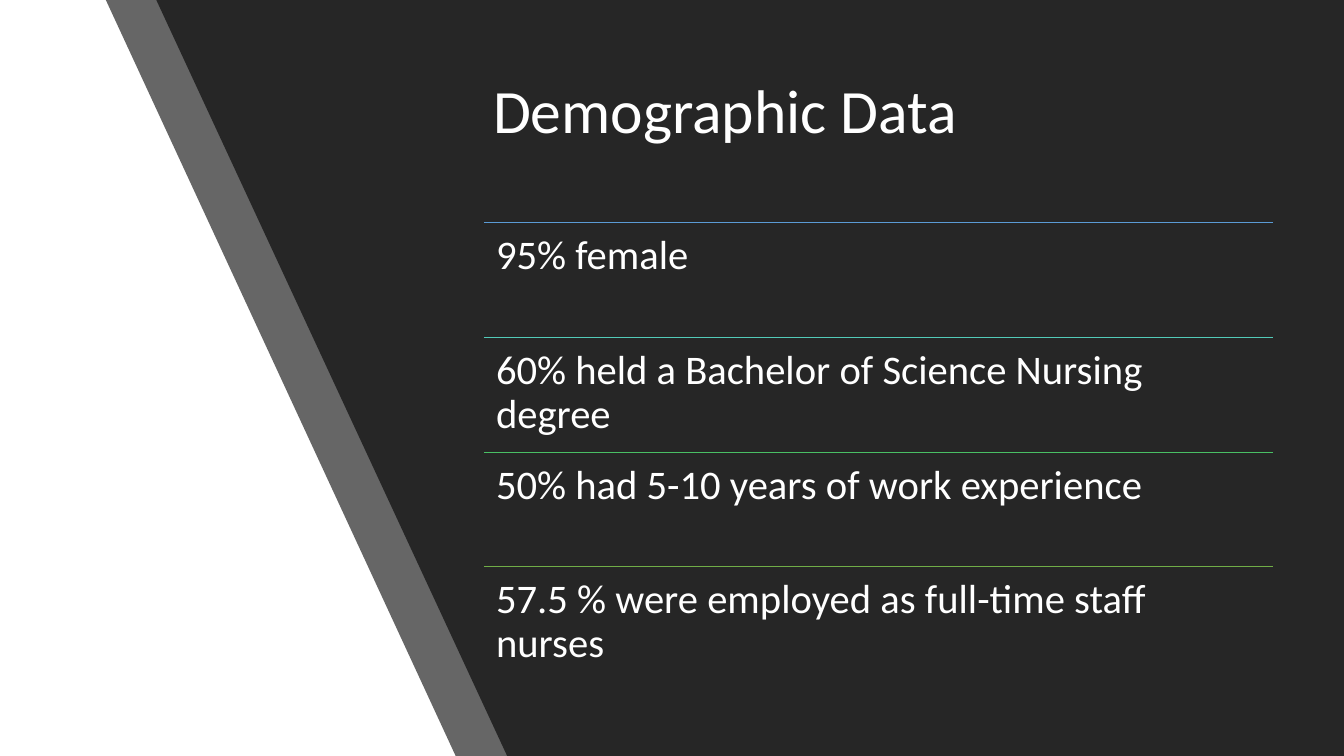
from lxml import etree
from pptx import Presentation
from pptx.dml.color import RGBColor
from pptx.enum.shapes import MSO_CONNECTOR, MSO_SHAPE
from pptx.enum.text import MSO_ANCHOR, PP_ALIGN
from pptx.oxml.ns import qn
from pptx.util import Pt

PX = 9144  # 100 px to the inch
WIDTH, HEIGHT = 1333, 750
STRAIGHT = MSO_CONNECTOR.STRAIGHT
RECTANGLE = MSO_SHAPE.RECTANGLE
TOP, MIDDLE = MSO_ANCHOR.TOP, MSO_ANCHOR.MIDDLE
LEFT = PP_ALIGN.LEFT

FONT = "Calibri"
BLACK = RGBColor(0x00, 0x00, 0x00)
WHITE = RGBColor(0xFF, 0xFF, 0xFF)
CHARCOAL = RGBColor(0x26, 0x26, 0x26)

LIST_LEFT, LIST_TOP, LIST_WIDTH, LIST_HEIGHT = 480, 221, 783, 455
FINDINGS = [
    ("95% female", RGBColor(0x5B, 0x9B, 0xD5)),
    ("60% held a Bachelor of Science Nursing degree", RGBColor(0x52, 0xCA, 0xB8)),
    ("50% had 5-10 years of work experience", RGBColor(0x49, 0xBF, 0x64)),
    ("57.5 % were employed as full-time staff nurses", RGBColor(0x70, 0xAD, 0x47)),
]


def px(value):
    return value * PX


def fill_plain(shape, color):
    shape.shadow.inherit = False
    shape.fill.solid()
    shape.fill.fore_color.rgb = color
    shape.line.fill.background()


def add_slanted_panel(slide, top_left, bottom_left, right, opacity=100):
    builder = slide.shapes.build_freeform(right, HEIGHT, scale=PX)
    builder.add_line_segments([(bottom_left, HEIGHT), (top_left, 0), (right, 0)])
    panel = builder.convert_to_shape()
    fill_plain(panel, CHARCOAL)
    if opacity < 100:
        color = panel.fill._xPr.find(qn("a:solidFill"))[0]
        etree.SubElement(color, qn("a:alpha"), val=str(opacity * 1000))


def write_text(shape, text, size, anchor):
    frame = shape.text_frame
    frame.text = text
    frame.word_wrap = True
    frame.vertical_anchor = anchor
    paragraph = frame.paragraphs[0]
    paragraph.alignment = LEFT
    paragraph.line_spacing = 0.9
    font = paragraph.runs[0].font
    font.name, font.size, font.color.rgb = FONT, Pt(size), WHITE


def place_title(slide, text):
    title = slide.shapes.title
    title.left, title.top = px(479), px(40)
    title.width, title.height = px(784), px(145)
    write_text(title, text, 44, MIDDLE)
    # Bring the title in front of the panels
    title.element.getparent().append(title.element)


def add_finding(group, top, height, text, color):
    rule = group.shapes.add_connector(
        STRAIGHT, px(LIST_LEFT), px(top), px(LIST_LEFT + LIST_WIDTH), px(top))
    rule.line.color.rgb = color
    rule.line.width = Pt(1)
    etree.SubElement(rule.element.spPr, qn("a:effectLst"))

    box = group.shapes.add_textbox(px(LIST_LEFT), px(top), px(LIST_WIDTH), px(height))
    frame = box.text_frame
    frame.margin_left = frame.margin_right = px(12)
    frame.margin_top = frame.margin_bottom = px(12)
    write_text(box, text, 29, TOP)


def main():
    presentation = Presentation()
    presentation.slide_width, presentation.slide_height = px(WIDTH), px(HEIGHT)
    slide = presentation.slides.add_slide(presentation.slide_layouts[5])

    # Backdrop
    slide.background.fill.solid()
    slide.background.fill.fore_color.rgb = BLACK
    backdrop = slide.shapes.add_shape(RECTANGLE, 0, 0, px(WIDTH), px(HEIGHT))
    fill_plain(backdrop, WHITE)
    add_slanted_panel(slide, 105, 452, 1332, opacity=70)
    add_slanted_panel(slide, 155, 503, WIDTH)

    place_title(slide, "Demographic Data")

    # Ruled list of findings
    group = slide.shapes.add_group_shape()
    pitch = LIST_HEIGHT / len(FINDINGS)
    for index, (text, color) in enumerate(FINDINGS):
        add_finding(group, LIST_TOP + round(index * pitch), round(pitch), text, color)

    presentation.save("out.pptx")


if __name__ == "__main__":
    main()
